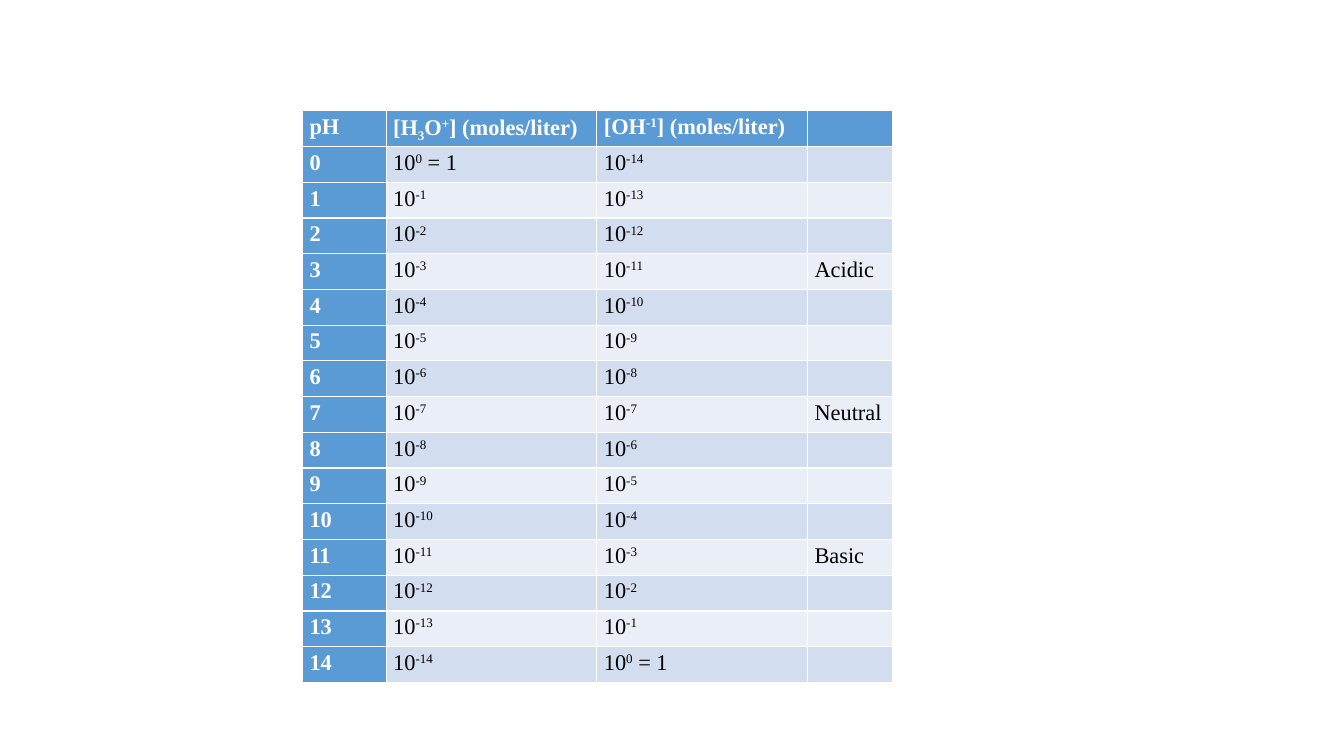
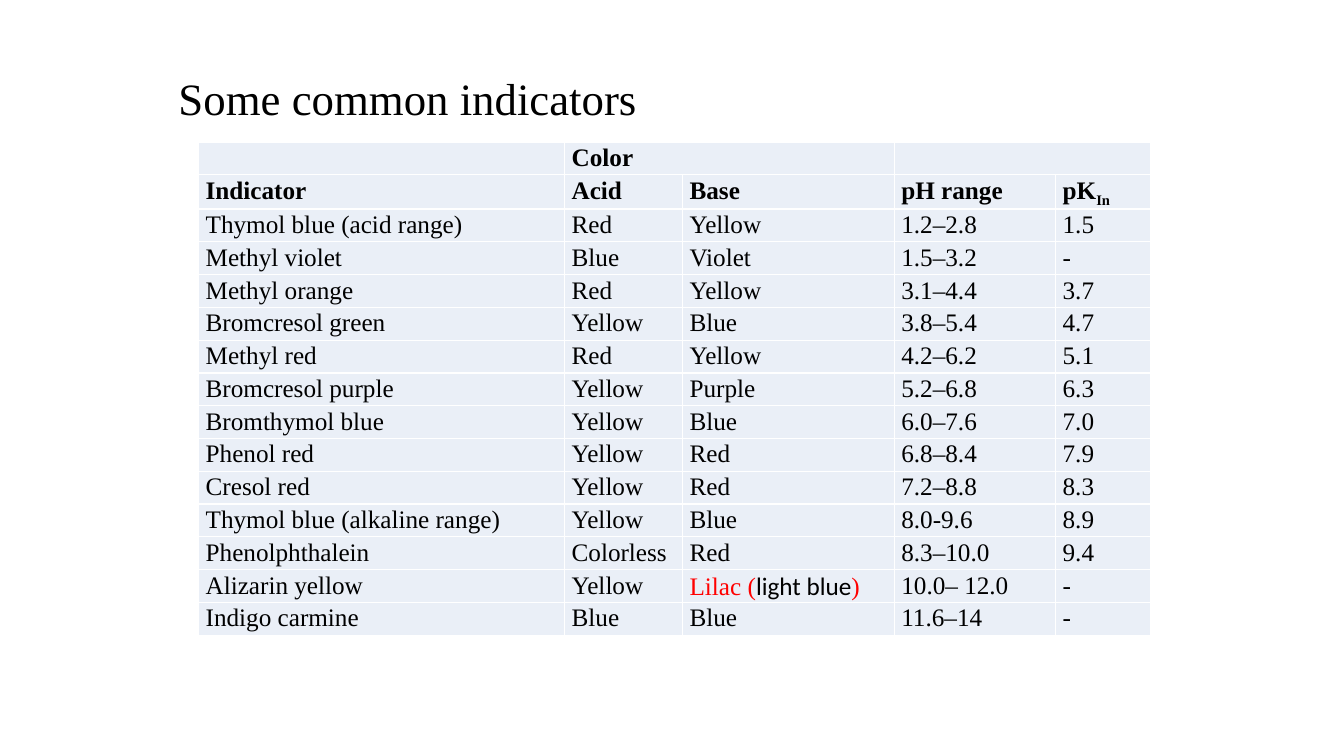
"""Build two chemistry slides: the pH scale and common indicators."""
from pptx import Presentation
from pptx.dml.color import RGBColor
from pptx.enum.text import MSO_ANCHOR, PP_ALIGN
from pptx.util import Inches, Pt

JUSTIFY, LEFT, TOP = PP_ALIGN.JUSTIFY, PP_ALIGN.LEFT, MSO_ANCHOR.TOP
COLORS = {"blue": "5B9BD5", "band": "D2DEEF", "pale": "EAEFF7",
          "white": "FFFFFF", "black": "000000", "red": "FF0000"}
FONT = "Times New Roman"
SUP, SUB = {"base": 30}, {"base": -25}


def add_run(p, text, size=18, color="black", bold=False, font=FONT, base=0):
    r = p.add_run()
    r.text = text
    r.font.name = font
    r.font.size = Pt(size)
    r.font.bold = bold
    r.font.color.rgb = RGBColor.from_string(COLORS[color])
    if base:
        r._r.get_or_add_rPr().set("baseline", str(base * 1000))


def fill_cell(cell, content, fill, align, spacing, **fmt):
    cell.fill.solid()
    cell.fill.fore_color.rgb = RGBColor.from_string(COLORS[fill])
    cell.margin_left = cell.margin_right = Inches(0.07)
    cell.margin_top = cell.margin_bottom = 0
    if not content:
        return
    p = cell.text_frame.paragraphs[0]
    p.alignment = align
    p.line_spacing = spacing
    runs = [(content, {})] if isinstance(content, str) else content
    for text, extra in runs:
        add_run(p, text, **{**fmt, **extra})


prs = Presentation()
prs.slide_width, prs.slide_height = Inches(13.33), Inches(7.5)
title_only, blank = prs.slide_layouts[5], prs.slide_layouts[6]

s = prs.slides.add_slide(blank)
zones = {3: "Acidic", 7: "Neutral", 11: "Basic"}
ph_rows = [["pH",
            [("[H", {}), ("3", SUB), ("O", {}), ("+", SUP), ("] (moles/liter)", {})],
            [("[OH", {}), ("-1", SUP), ("] (moles/liter)", {})],
            ""]]
for ph in range(15):
    powers = [[("10", {}), (str(-n), SUP)] for n in (ph, 14 - ph)]
    for n, power in zip((ph, 14 - ph), powers):
        if n == 0:
            power.append((" = 1", {}))
    ph_rows.append([str(ph), *powers, zones.get(ph, "")])

table = s.shapes.add_table(len(ph_rows), 4, Inches(3), Inches(1.1),
                           Inches(5.85), Inches(5.67)).table
table.first_col = True
for column, width in zip(table.columns, (0.83, 2.09, 2.09, 0.84)):
    column.width = Inches(width)
for i, row in enumerate(ph_rows):
    for j, content in enumerate(row):
        head = i == 0 or j == 0
        fill = "blue" if head else "band" if i % 2 else "pale"
        fill_cell(table.cell(i, j), content, fill, JUSTIFY, 1.15, size=16,
                  color="white" if head else "black", bold=head)

s = prs.slides.add_slide(title_only)
title = s.shapes.title
title.left, title.top = Inches(1.67), Inches(0.71)
title.width, title.height = Inches(10), Inches(0.65)
tf = title.text_frame
tf.vertical_anchor = TOP
p = tf.paragraphs[0]
p.alignment = JUSTIFY
p.line_spacing = 0.9
p.space_before = Pt(10)
add_run(p, "Some common indicators", size=32)

lilac = [("Lilac (", {"color": "red"}), ("light blue", {"font": "Calibri"}),
         (")", {"color": "red"})]
indicator_rows = [
    ["", "Color", "", "", ""],
    ["Indicator", "Acid", "Base", "pH range", [("pK", {}), ("In", SUB)]],
    ["Thymol blue (acid range)", "Red", "Yellow", "1.2–2.8", "1.5"],
    ["Methyl violet", "Blue", "Violet", "1.5–3.2", "-"],
    ["Methyl orange", "Red", "Yellow", "3.1–4.4", "3.7"],
    ["Bromcresol green", "Yellow", "Blue", "3.8–5.4", "4.7"],
    ["Methyl red", "Red", "Yellow", "4.2–6.2", "5.1"],
    ["Bromcresol purple", "Yellow", "Purple", "5.2–6.8", "6.3"],
    ["Bromthymol blue", "Yellow", "Blue", "6.0–7.6", "7.0"],
    ["Phenol red", "Yellow", "Red", "6.8–8.4", "7.9"],
    ["Cresol red", "Yellow", "Red", "7.2–8.8", "8.3"],
    ["Thymol blue (alkaline range)", "Yellow", "Blue", "8.0-9.6", "8.9"],
    ["Phenolphthalein", "Colorless", "Red", "8.3–10.0", "9.4"],
    ["Alizarin yellow", "Yellow", lilac, "10.0– 12.0", "-"],
    ["Indigo carmine", "Blue", "Blue", "11.6–14", "-"],
]
table = s.shapes.add_table(len(indicator_rows), 5, Inches(1.97), Inches(1.41),
                           Inches(9.44), Inches(4.88)).table
table.first_row = table.horz_banding = False
for column, width in zip(table.columns, (3.63, 1.17, 2.1, 1.6, 0.94)):
    column.width = Inches(width)
for i, row in enumerate(indicator_rows):
    for j, content in enumerate(row):
        fill_cell(table.cell(i, j), content, "pale", LEFT, 1.07, bold=i < 2)
for j in (1, 3):
    table.cell(0, j).merge(table.cell(0, j + 1))

prs.save("out.pptx")
